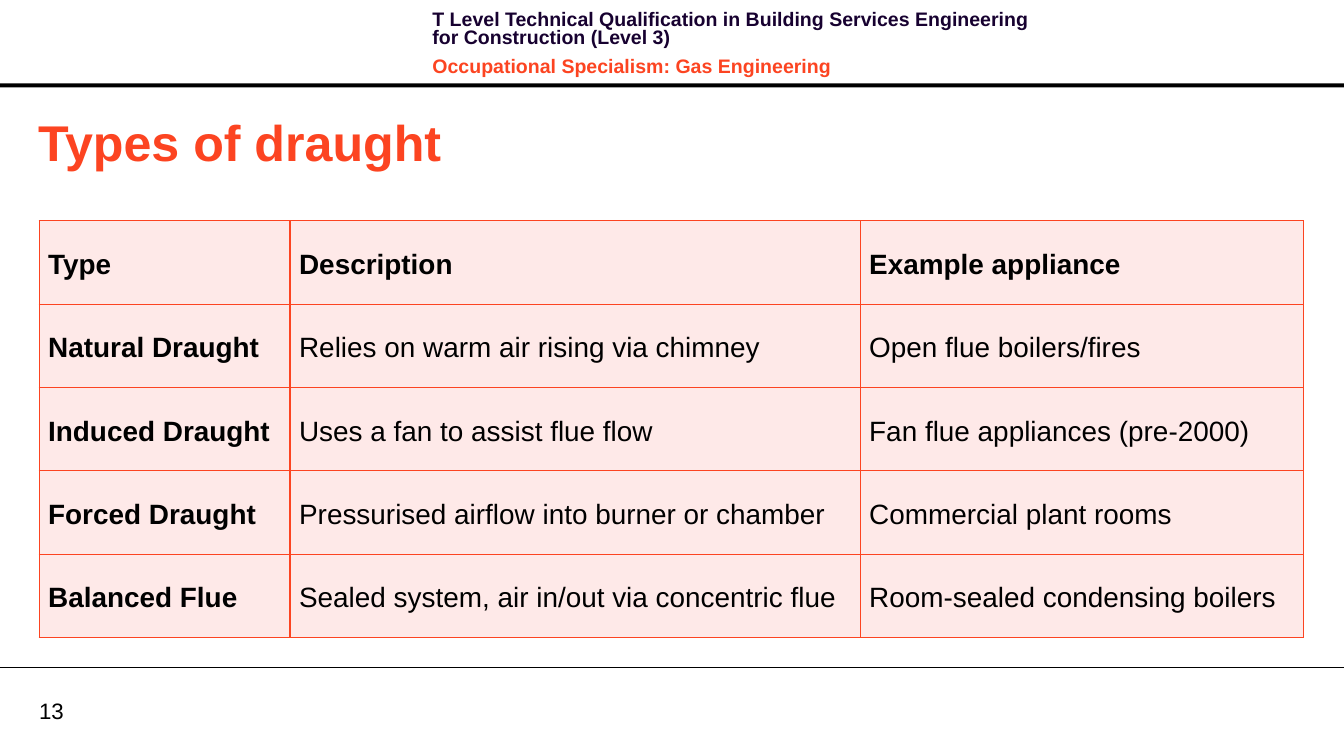
from dataclasses import dataclass

from lxml.etree import SubElement
from pptx import Presentation
from pptx.dml.color import RGBColor
from pptx.enum.shapes import MSO_CONNECTOR, MSO_SHAPE
from pptx.enum.text import MSO_ANCHOR, MSO_AUTO_SIZE, PP_ALIGN
from pptx.oxml import parse_xml
from pptx.oxml.ns import nsdecls, qn
from pptx.util import Inches, Pt


@dataclass(frozen=True)
class Theme:
    font: str = "Arial"
    black: str = "000000"
    navy: str = "170130"
    orange: str = "FC4421"
    pink: str = "FEE9E8"
    title_size: int = 36
    table_size: int = 20
    number_size: int = 16
    header_size: int = 14


WIDTH, HEIGHT = 13.39, 7.48
HEADER = [
    "T Level Technical Qualification in Building Services Engineering for Construction (Level 3)",
    "Occupational Specialism: Gas Engineering",
]
COLUMN_WIDTHS = [2.5, 5.68, 4.42]
ROW_HEIGHT = 0.83
DRAUGHTS = [
    ["Type", "Description", "Example appliance"],
    ["Natural Draught", "Relies on warm air rising via chimney", "Open flue boilers/fires"],
    ["Induced Draught", "Uses a fan to assist flue flow", "Fan flue appliances (pre-2000)"],
    ["Forced Draught", "Pressurised airflow into burner or chamber", "Commercial plant rooms"],
    ["Balanced Flue", "Sealed system, air in/out via concentric flue", "Room-sealed condensing boilers"],
]


def apply(target, values):
    """Set each named attribute of target."""
    for name, value in values.items():
        setattr(target, name, value)


class SlideBuilder:
    def __init__(self, slide, theme):
        self.slide = slide
        self.theme = theme

    def add_text(self, para, text, size, color, bold=False, **layout):
        """Fill a paragraph; layout holds its spacing and alignment."""
        apply(para, layout)
        span = para.add_run()
        span.text = text
        apply(span.font, {"name": self.theme.font, "size": Pt(size), "bold": bold})
        span.font.color.rgb = RGBColor.from_string(color)

    def title(self, text, left, top, width, height):
        box = self.slide.shapes.title
        apply(box, {"left": Inches(left), "top": Inches(top),
                    "width": Inches(width), "height": Inches(height)})
        apply(box.text_frame, {"vertical_anchor": MSO_ANCHOR.MIDDLE, "word_wrap": True,
                               "auto_size": MSO_AUTO_SIZE.SHAPE_TO_FIT_TEXT})
        self.add_text(box.text_frame.paragraphs[0], text, self.theme.title_size,
                      self.theme.orange, True, alignment=PP_ALIGN.LEFT)

    def text_box(self, left, top, width, height, **frame_format):
        box = self.slide.shapes.add_textbox(*map(Inches, (left, top, width, height)))
        apply(box.text_frame, {"word_wrap": True, **frame_format})
        return box.text_frame

    def header(self, lines):
        frame = self.text_box(4.21, 0.07, 6.37, 0.64)
        for index, (text, color) in enumerate(zip(lines, (self.theme.navy, self.theme.orange))):
            para = frame.add_paragraph() if index else frame.paragraphs[0]
            self.add_text(para, text, self.theme.header_size, color, True,
                          line_spacing=Pt(13.1), space_before=Pt(4 if index else 0),
                          space_after=Pt(4))

    def page_number(self, number):
        margins = dict.fromkeys(("margin_left", "margin_right", "margin_top", "margin_bottom"), 0)
        frame = self.text_box(0.39, 6.94, 0.64, 0.27,
                              vertical_anchor=MSO_ANCHOR.MIDDLE, **margins)
        self.add_text(frame.paragraphs[0], number, self.theme.number_size, self.theme.black)

    def bar(self, top, height):
        bar = self.slide.shapes.add_shape(
            MSO_SHAPE.RECTANGLE, 0, Inches(top), Inches(WIDTH), Inches(height))
        bar.shadow.inherit = False
        bar.fill.solid()
        bar.fill.fore_color.rgb = RGBColor.from_string(self.theme.black)
        bar.line.fill.background()

    def rule(self, top):
        rule = self.slide.shapes.add_connector(
            MSO_CONNECTOR.STRAIGHT, 0, Inches(top), Inches(WIDTH), Inches(top))
        rule.line.color.rgb = RGBColor.from_string(self.theme.black)
        rule.line.width = Pt(0.75)
        SubElement(rule._element.spPr, qn("a:effectLst"))

    def border(self, cell):
        properties = cell._tc.get_or_add_tcPr()
        for position, side in enumerate(("lnL", "lnR", "lnT", "lnB")):
            properties.insert(position, parse_xml(
                f'<a:{side} {nsdecls("a")} w="{Pt(1)}"><a:solidFill>'
                f'<a:srgbClr val="{self.theme.orange}"/></a:solidFill></a:{side}>'))

    def table(self, rows, left, top):
        table = self.slide.shapes.add_table(
            len(rows), len(COLUMN_WIDTHS), Inches(left), Inches(top),
            Inches(sum(COLUMN_WIDTHS)), Inches(ROW_HEIGHT * len(rows))).table
        apply(table, {"first_row": False, "horz_banding": False})
        for column, width in zip(table.columns, COLUMN_WIDTHS):
            column.width = Inches(width)
        for row_index, row in enumerate(rows):
            for column_index, text in enumerate(row):
                cell = table.cell(row_index, column_index)
                apply(cell, {"vertical_anchor": MSO_ANCHOR.MIDDLE,
                             "margin_left": Inches(0.09), "margin_right": Inches(0.01),
                             "margin_top": Inches(0.01), "margin_bottom": Inches(0.01)})
                cell.fill.solid()
                cell.fill.fore_color.rgb = RGBColor.from_string(self.theme.pink)
                self.border(cell)
                self.add_text(cell.text_frame.paragraphs[0], text, self.theme.table_size,
                              self.theme.black, row_index == 0 or column_index == 0,
                              line_spacing=1.15, space_after=Pt(8))


def main():
    deck = Presentation()
    apply(deck, {"slide_width": Inches(WIDTH), "slide_height": Inches(HEIGHT)})
    title_only = deck.slide_layouts[5]
    page = SlideBuilder(deck.slides.add_slide(title_only), Theme())
    page.bar(0.83, 0.04)
    page.page_number("13")
    page.rule(6.65)
    page.header(HEADER)
    page.title("Types of draught", 0.28, 1.05, 12.72, 0.71)
    page.table(DRAUGHTS, 0.39, 2.2)
    deck.save("out.pptx")


if __name__ == "__main__":
    main()
